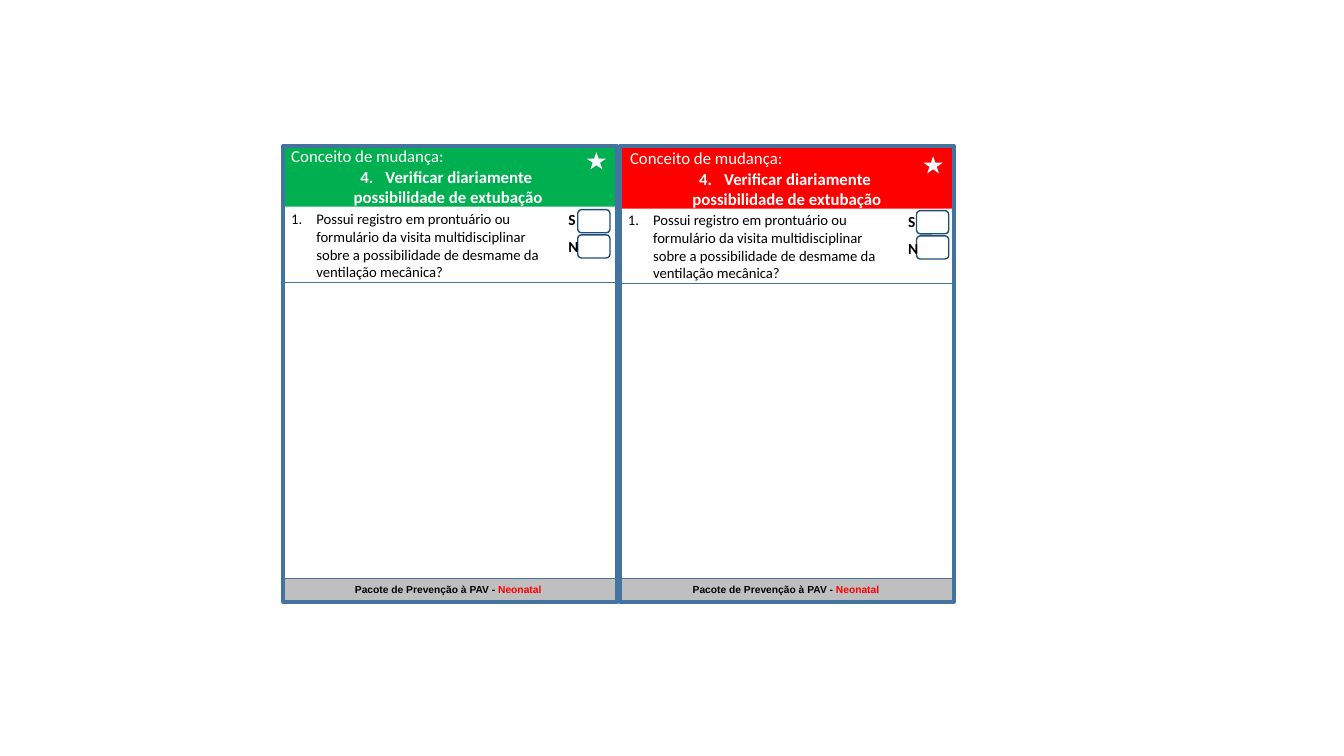
from dataclasses import dataclass

from lxml import etree
from pptx import Presentation
from pptx.dml.color import RGBColor
from pptx.enum.shapes import MSO_CONNECTOR, MSO_SHAPE as SHAPE
from pptx.enum.text import MSO_ANCHOR, PP_ALIGN as ALIGN
from pptx.oxml.ns import qn
from pptx.util import Inches, Pt

GREEN = RGBColor(0x00, 0xB0, 0x50)
RED = RGBColor(0xFF, 0x00, 0x00)
BLUE = RGBColor(0x43, 0x73, 0x9E)
NAVY = RGBColor(0x1F, 0x4E, 0x79)
GREY = RGBColor(0xBF, 0xBF, 0xBF)
WHITE = RGBColor(0xFF, 0xFF, 0xFF)
BLACK = RGBColor(0x00, 0x00, 0x00)

CARD_W = 3.31
QUESTION = ("Possui registro em prontuário ou formulário da visita multidisciplinar "
            "sobre a possibilidade de desmame da ventilação mecânica?")


@dataclass
class Card:
    """Colour and anchor points of one checklist card, in inches."""
    color: RGBColor
    header: tuple
    question: tuple
    footer_x: float
    frame_x: float
    divider_y: float
    star: tuple
    answers: tuple
    labels: tuple


CARDS = [
    Card(GREEN, (2.79, 1.45), (2.79, 2.12), 2.79, 2.81, 2.8,
         (5.82, 1.51), (5.73, 2.08), (5.54, 2.1)),
    Card(RED, (6.15, 1.47), (6.13, 2.13), 6.14, 6.15, 2.81,
         (9.16, 1.55), (9.09, 2.09), (8.91, 2.12)),
]


def add_box(slide, kind, x, y, w, h, fill=None, line=None, weight=1):
    """Add a preset shape with an optional fill and outline."""
    sp = slide.shapes.add_shape(kind, Inches(x), Inches(y), Inches(w), Inches(h))
    sp.shadow.inherit = False
    if fill is None:
        sp.fill.background()
    else:
        sp.fill.solid()
        sp.fill.fore_color.rgb = fill
    if line is None:
        sp.line.fill.background()
    else:
        sp.line.color.rgb = line
        sp.line.width = Pt(weight)
    return sp


def add_rule(slide, x1, x2, y):
    """Add a thin horizontal line without shadow."""
    ln = slide.shapes.add_connector(MSO_CONNECTOR.STRAIGHT, Inches(x1), Inches(y),
                                    Inches(x2), Inches(y))
    ln.line.color.rgb = BLUE
    ln.line.width = Pt(1)
    etree.SubElement(ln._element.spPr, qn("a:effectLst"))


def add_text(slide, x, y, w, h):
    """Add an empty text box."""
    return slide.shapes.add_textbox(Inches(x), Inches(y), Inches(w), Inches(h))


def write(sp, lines, size, color, bold=False, align=ALIGN.CENTER, font="Calibri"):
    """Write paragraphs in one style, anchored in the middle."""
    tf = sp.text_frame
    tf.text = "\n".join(lines)
    tf.word_wrap = True
    tf.vertical_anchor = MSO_ANCHOR.MIDDLE
    for p in tf.paragraphs:
        p.alignment = align
        for r in p.runs:
            style_run(r, size, color, bold, font)
    return tf


def style_run(r, size, color, bold, font):
    """Set the font of a run."""
    r.font.name = font
    r.font.size = Pt(size)
    r.font.bold = bold
    r.font.color.rgb = color


def number(p, start=1):
    """Number a paragraph with a hanging indent."""
    pPr = p._p.get_or_add_pPr()
    pPr.set("marL", str(Inches(0.25)))
    pPr.set("indent", str(Inches(-0.25)))
    etree.SubElement(pPr, qn("a:buFont"), typeface="+mj-lt")
    etree.SubElement(pPr, qn("a:buAutoNum"), type="arabicPeriod", startAt=str(start))


def add_header(slide, card):
    """Add the coloured heading and its star."""
    sp = add_box(slide, SHAPE.RECTANGLE, *card.header, CARD_W, 0.6, card.color)
    tf = write(sp, ["Conceito de mudança:", "Verificar diariamente ",
                    "possibilidade de extubação"], 12, WHITE, True)
    intro, item, _ = tf.paragraphs
    intro.alignment = ALIGN.LEFT
    intro.runs[0].font.bold = False
    number(item, 4)
    add_box(slide, SHAPE.STAR_5_POINT, *card.star, 0.19, 0.17, WHITE)


def add_question(slide, card):
    """Add the numbered question with its S and N answer boxes."""
    sp = add_text(slide, *card.question, 2.73, 0.63)
    tf = write(sp, [QUESTION], 10.5, BLACK, align=ALIGN.LEFT)
    number(tf.paragraphs[0])
    box_x, box_y = card.answers
    label_x, label_y = card.labels
    for i, letter in enumerate("SN"):
        add_box(slide, SHAPE.ROUNDED_RECTANGLE, box_x, box_y + 0.25 * i, 0.32, 0.23,
                line=NAVY)
        label = add_text(slide, label_x, label_y + 0.27 * i, 0.23, 0.15)
        write(label, [letter], 11, BLACK, True)


def add_footer(slide, x):
    """Add the grey footer with the package name."""
    sp = add_box(slide, SHAPE.RECTANGLE, x, 5.74, CARD_W, 0.22, GREY)
    tf = write(sp, ["Pacote de Prevenção à PAV - "], 7.3, BLACK, True, font="Arial")
    r = tf.paragraphs[0].add_run()
    r.text = "Neonatal"
    style_run(r, 7.3, RED, True, "Arial")


def add_card(slide, card):
    """Draw one whole card."""
    add_footer(slide, card.footer_x)
    add_header(slide, card)
    add_box(slide, SHAPE.RECTANGLE, card.frame_x, 1.45, CARD_W, 4.52, line=BLUE, weight=3)
    add_question(slide, card)
    for y in (card.divider_y, 5.74):
        add_rule(slide, card.frame_x, card.frame_x + CARD_W, y)


def main():
    """Build and save the slide."""
    prs = Presentation()
    prs.slide_width, prs.slide_height = Inches(13.33), Inches(7.5)
    slide = prs.slides.add_slide(prs.slide_layouts[6])
    for card in CARDS:
        add_card(slide, card)
    prs.save("out.pptx")


if __name__ == "__main__":
    main()
